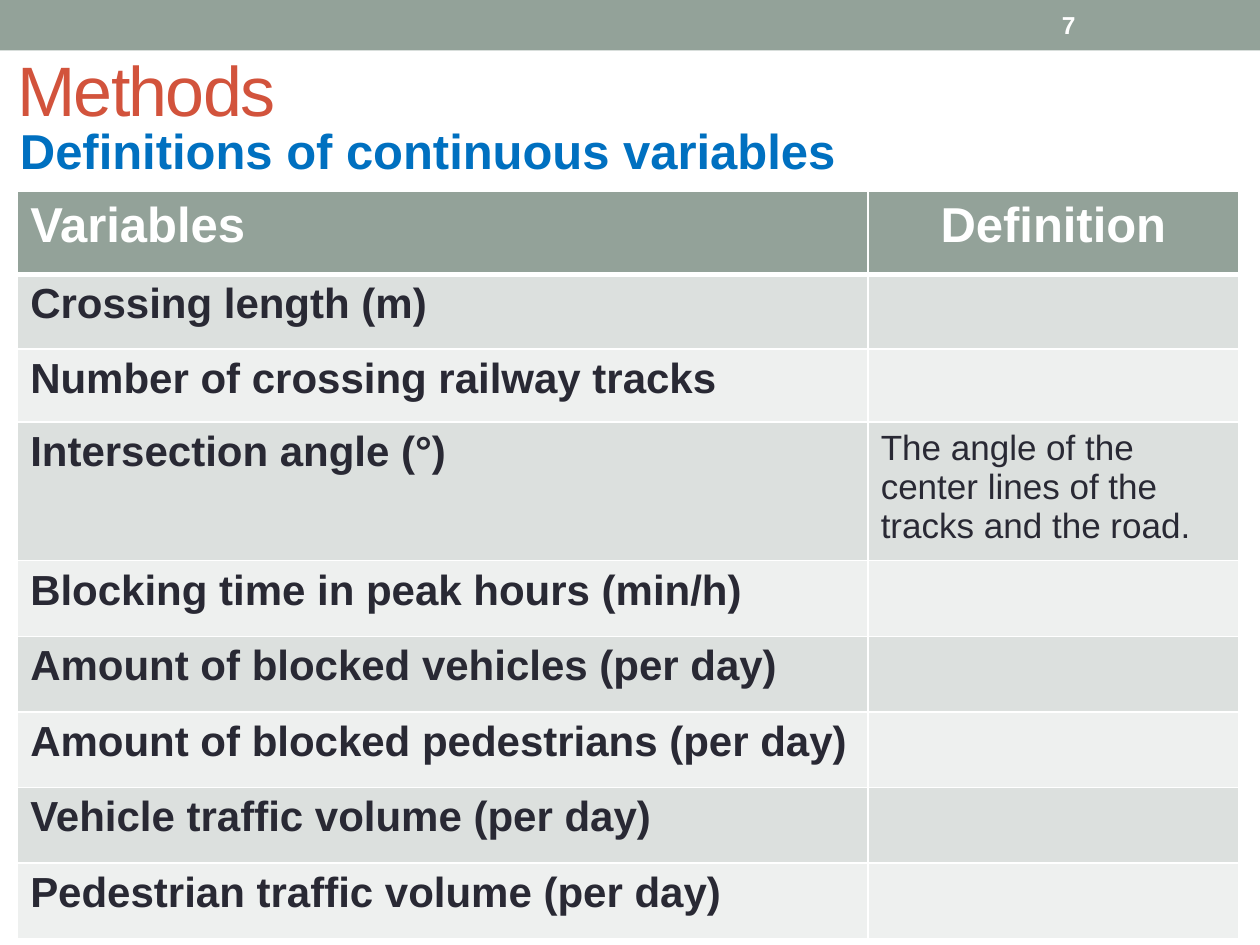
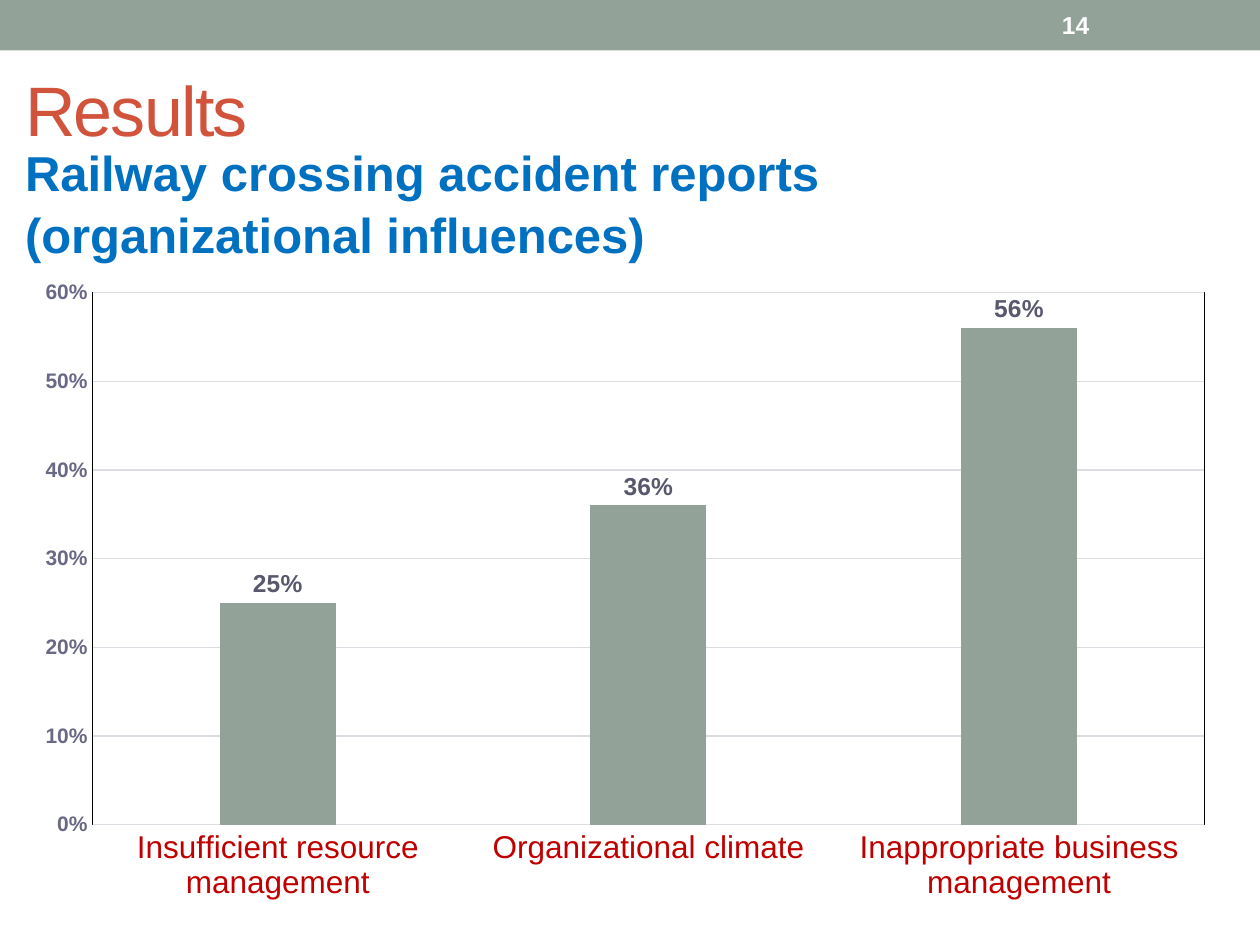
from lxml import etree
from pptx import Presentation
from pptx import util as u
from pptx.chart.data import CategoryChartData
from pptx.dml.color import RGBColor
from pptx.enum import chart as kinds, shapes, text
from pptx.oxml import parse_xml
from pptx.oxml.ns import nsdecls, qn

SAGE, RED, BLUE, WHITE, INK = "93A299", "D2533C", "0070C0", "FFFFFF", "292934"
BANDS = ("DCE0DE", "EEF0EF")
FONT = "Arial"
TITLE = {"size": 40, "color": RED}
SUBTITLE = {"size": 28, "color": BLUE, "bold": True}
NUMBER = {"size": 14, "color": WHITE, "bold": True}
HEADER = {"size": 28, "color": WHITE, "bold": True}
VARIABLE = {"size": 24, "color": INK, "bold": True}
DEFINITION = {"size": 20, "color": INK, "bold": False}


def rgb(value):
    return RGBColor.from_string(value)


def style_font(font, style):
    font.name = FONT
    for name, value in style.items():
        if name == "color":
            font.color.rgb = rgb(value)
        else:
            setattr(font, name, u.Pt(value) if name == "size" else value)


class Deck:
    """Holds the presentation, its shared look and the current slide."""

    def __init__(self):
        self.deck = Presentation()
        self.deck.slide_width = u.Inches(10)
        self.deck.slide_height = u.Inches(7.5)
        self.page = None

    def add_page(self, number):
        self.page = self.deck.slides.add_slide(self.deck.slide_layouts[6])
        band = self.page.shapes.add_shape(
            shapes.MSO_SHAPE.RECTANGLE, 0, 0, self.deck.slide_width, u.Inches(0.4))
        band.shadow.inherit = False
        band.fill.solid()
        band.fill.fore_color.rgb = rgb(SAGE)
        band.line.fill.background()
        self.add_text((8.33, 0.02, 1.17, 0.36), [str(number)], NUMBER, middle=True)

    def add_text(self, place, lines, style, middle=False, before=0, spacing=None):
        box = self.page.shapes.add_textbox(*map(u.Inches, place))
        frame = box.text_frame
        frame.word_wrap = True
        frame.vertical_anchor = text.MSO_ANCHOR.MIDDLE if middle else text.MSO_ANCHOR.TOP
        for index, line in enumerate(lines):
            para = frame.add_paragraph() if index else frame.paragraphs[0]
            para.space_before = u.Pt(before)
            span = para.add_run()
            span.text = line
            style_font(span.font, style)
            if spacing is not None:
                span.font._element.set("spc", str(spacing))

    def add_heading(self, title, title_place, subtitle, subtitle_place):
        self.add_text(title_place, [title], TITLE, middle=True, spacing=-100)
        self.add_text(subtitle_place, subtitle, SUBTITLE, before=2)

    def fill_cell(self, cell, words, style, fill, bottom=1, centred=False):
        properties = cell._tc.get_or_add_tcPr()
        for side, width in (("L", 1), ("R", 1), ("T", 1), ("B", bottom)):
            properties.append(parse_xml(
                f'<a:ln{side} {nsdecls("a")} w="{u.Pt(width)}"><a:solidFill>'
                f'<a:srgbClr val="{WHITE}"/></a:solidFill></a:ln{side}>'))
        cell.fill.solid()
        cell.fill.fore_color.rgb = rgb(fill)
        if words:
            para = cell.text_frame.paragraphs[0]
            para.alignment = text.PP_ALIGN.CENTER if centred else text.PP_ALIGN.LEFT
            span = para.add_run()
            span.text = words
            style_font(span.font, style)

    def add_table(self, place, widths, heights, header, rows):
        table = self.page.shapes.add_table(
            len(heights), len(widths), *map(u.Inches, place)).table
        for column, width in zip(table.columns, widths):
            column.width = u.Inches(width)
        for row, height in zip(table.rows, heights):
            row.height = u.Inches(height)
        for column, words in enumerate(header):
            self.fill_cell(table.cell(0, column), words, HEADER, SAGE, 3, column == 1)
        for index, row in enumerate(rows):
            for column, words in enumerate(row):
                self.fill_cell(table.cell(index + 1, column), words,
                               (VARIABLE, DEFINITION)[column], BANDS[index % 2])

    def add_columns(self, place, shares):
        data = CategoryChartData(number_format="0%")
        data.categories = list(shares)
        data.add_series("Series 1", list(shares.values()))
        chart = self.page.shapes.add_chart(
            kinds.XL_CHART_TYPE.COLUMN_CLUSTERED, *map(u.Inches, place), data).chart
        chart.has_legend = chart.has_title = False
        style_font(chart.font, {"size": 10, "color": INK})

        # Columns and their labels
        plot = chart.plots[0]
        for name, value in {"gap_width": 219, "overlap": -27, "vary_by_categories": False,
                            "has_data_labels": True}.items():
            setattr(plot, name, value)
        fill = plot.series[0].format.fill
        fill.solid()
        fill.fore_color.rgb = rgb(SAGE)
        labels = plot.data_labels
        for name, value in {"show_value": True, "number_format": "0%",
                            "number_format_is_linked": False,
                            "position": kinds.XL_LABEL_POSITION.OUTSIDE_END}.items():
            setattr(labels, name, value)
        style_font(labels.font, {"size": 14, "color": "57576E", "bold": True})

        # Axes and gridlines
        axes = ((chart.category_axis, {"size": 18, "color": "C00000", "bold": False}),
                (chart.value_axis, {"size": 12, "color": "696986", "bold": True}))
        for axis, style in axes:
            axis.major_tick_mark = axis.minor_tick_mark = kinds.XL_TICK_MARK.NONE
            axis.format.line.fill.background()
            style_font(axis.tick_labels.font, style)
        scale = chart.value_axis
        scale.minimum_scale, scale.maximum_scale, scale.major_unit = 0, 0.6, 0.1
        scale.tick_labels.number_format = "0%"
        scale.tick_labels.number_format_is_linked = False
        grid = scale.major_gridlines.format.line
        grid.color.rgb = rgb("DCDCE3")
        grid.width = u.Pt(0.75)

        # Thin frame around the plot
        area = chart._chartSpace.find(".//" + qn("c:plotArea"))
        frame = etree.SubElement(area, qn("c:spPr"))
        etree.SubElement(frame, qn("a:noFill"))
        line = etree.SubElement(frame, qn("a:ln"), w=str(u.Pt(0.5)))
        paint = etree.SubElement(line, qn("a:solidFill"))
        etree.SubElement(paint, qn("a:srgbClr"), val="000000")


def main():
    show = Deck()

    # Methods: variables and their definitions
    show.add_page(7)
    show.add_heading("Methods", (0.04, 0.16, 9, 1.09),
                     ["Definitions of continuous variables"], (0.06, 0.91, 9.08, 0.57))
    show.add_table(
        (0.14, 1.52, 9.69, 5.91), (6.75, 2.94), [0.66, 0.59, 0.58, 1.09] + [0.6] * 5,
        ("Variables", "Definition"),
        [("Crossing length (m)", ""),
         ("Number of crossing railway tracks", ""),
         ("Intersection angle (°)",
          "The angle of the center lines of the tracks and the road."),
         ("Blocking time in peak hours (min/h)", ""),
         ("Amount of blocked vehicles (per day)", ""),
         ("Amount of blocked pedestrians (per day)", ""),
         ("Vehicle traffic volume (per day)", ""),
         ("Pedestrian traffic volume (per day)", "")])

    # Results: organizational influences
    show.add_page(14)
    show.add_heading("Results", (0.1, 0.43, 7.62, 0.86),
                     ["Railway crossing accident reports", "(organizational influences)"],
                     (0.1, 1.08, 9.79, 1.04))
    show.add_columns((0.17, 2.13, 9.58, 5.12),
                     {"Insufficient resource management": 0.25,
                      "Organizational climate": 0.36,
                      "Inappropriate business management": 0.56})

    show.deck.save("out.pptx")


if __name__ == "__main__":
    main()
